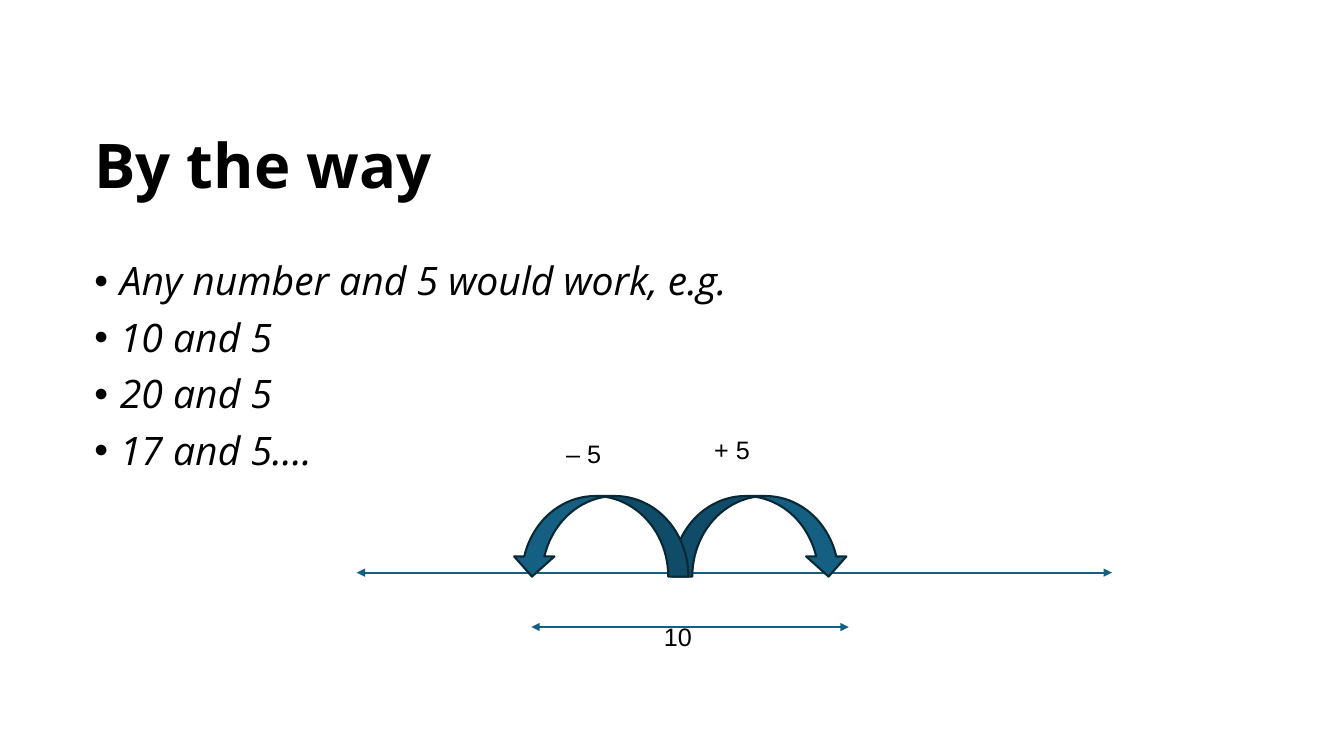
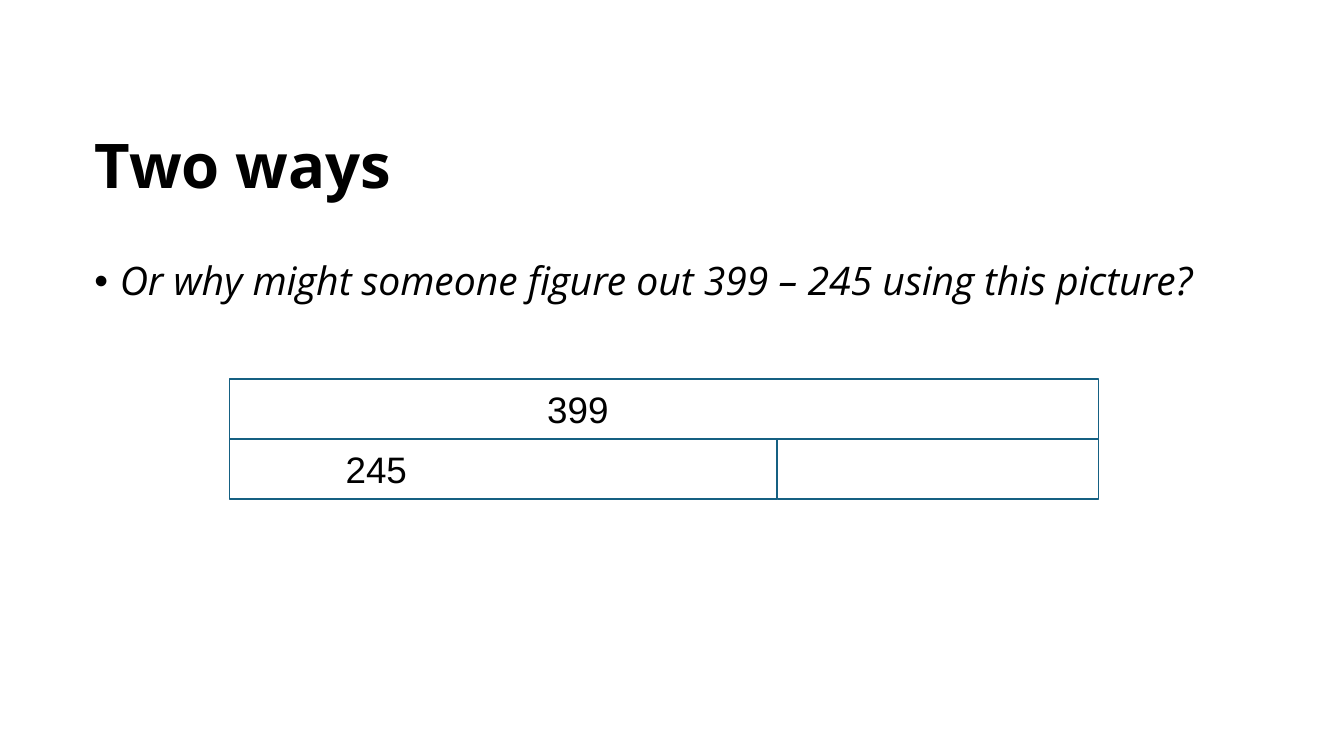
from dataclasses import dataclass

from lxml.etree import SubElement
from pptx import Presentation
from pptx.dml.color import RGBColor as Rgb
from pptx.enum.shapes import MSO_CONNECTOR as Connector, MSO_SHAPE as Preset
from pptx.enum.text import MSO_ANCHOR as Anchor, MSO_AUTO_SIZE as AutoSize, PP_ALIGN as Align
from pptx.oxml.ns import qn
from pptx.util import Cm, Pt


@dataclass(frozen=True)
class Theme:
    ink: Rgb = Rgb(0x00, 0x00, 0x00)
    paper: Rgb = Rgb(0xFF, 0xFF, 0xFF)
    accent: Rgb = Rgb(0x15, 0x60, 0x82)
    accent_dark: Rgb = Rgb(0x08, 0x28, 0x36)
    text_font: str = "Open Sans"
    label_font: str = "Arial"
    title_size: float = 44
    body_size: float = 28
    bar_size: float = 26.3
    label_size: float = 18
    line_width: float = 1.5
    bar_line_width: float = 1.1
    leading: float = 0.9
    bullet_gap: float = 10


THEME = Theme()
MARGIN = 2.13
CONTENT_WIDTH = 29.21


def format_runs(para, font, size, bold=False, italic=False):
    for span in para.runs:
        span.font.name = font
        span.font.size = Pt(size)
        span.font.bold = bold
        span.font.italic = italic
        span.font.color.rgb = THEME.ink


def place(shape, left, top, width, height):
    shape.left, shape.top = Cm(left), Cm(top)
    shape.width, shape.height = Cm(width), Cm(height)


def add_page(deck, title):
    page = deck.slides.add_slide(deck.slide_layouts[5])
    page.background.fill.solid()
    page.background.fill.fore_color.rgb = THEME.paper
    heading = page.shapes.title
    place(heading, MARGIN, 2.41, CONTENT_WIDTH, 3.68)
    frame = heading.text_frame
    frame.text = title
    frame.auto_size = AutoSize.NONE
    frame.vertical_anchor = Anchor.MIDDLE
    para = frame.paragraphs[0]
    para.alignment = Align.LEFT
    para.line_spacing = THEME.leading
    format_runs(para, THEME.text_font, THEME.title_size, bold=True)
    return page


def add_text_box(page, left, top, width, height):
    box = page.shapes.add_textbox(Cm(left), Cm(top), Cm(width), Cm(height))
    box.text_frame.word_wrap = True
    return box.text_frame


def set_bullet(para):
    props = para._p.get_or_add_pPr()
    props.set("marL", str(Cm(0.64)))
    props.set("indent", str(-Cm(0.64)))
    colour = SubElement(props, qn("a:buClr"))
    SubElement(colour, qn("a:srgbClr"), val=str(THEME.ink))
    SubElement(props, qn("a:buFont"), typeface=THEME.label_font)
    SubElement(props, qn("a:buChar"), char="•")


def add_bullets(page, lines):
    frame = add_text_box(page, MARGIN, 6.48, CONTENT_WIDTH, 12.09)
    for index, line in enumerate(lines):
        para = frame.add_paragraph() if index else frame.paragraphs[0]
        para.text = line
        set_bullet(para)
        para.line_spacing = THEME.leading
        if index:
            para.space_before = Pt(THEME.bullet_gap)
        format_runs(para, THEME.text_font, THEME.body_size, italic=True)


def add_label(page, text, left, top):
    frame = add_text_box(page, left, top, 3.33, 1.02)
    frame.text = text
    format_runs(frame.paragraphs[0], THEME.label_font, THEME.label_size)


def add_double_arrow(page, start, end, height):
    arrow = page.shapes.add_connector(
        Connector.STRAIGHT, Cm(start), Cm(height), Cm(end), Cm(height))
    arrow.line.color.rgb = THEME.accent
    arrow.line.width = Pt(THEME.line_width)
    outline = arrow.line._get_or_add_ln()
    for tag in ("a:headEnd", "a:tailEnd"):
        SubElement(outline, qn(tag), type="triangle")
    SubElement(arrow._element.spPr, qn("a:effectLst"))


def add_jump(page, left, backwards=False):
    jump = page.shapes.add_shape(
        Preset.CURVED_DOWN_ARROW, Cm(left), Cm(12.5), Cm(4.45), Cm(2.03))
    jump.shadow.inherit = False
    jump.fill.solid()
    jump.fill.fore_color.rgb = THEME.accent
    jump.line.color.rgb = THEME.accent_dark
    jump.line.width = Pt(THEME.line_width)
    if backwards:
        jump._element.spPr.find(qn("a:xfrm")).set("flipH", "1")


def add_bar(page, left, top, width, height, text="", indent=0):
    bar = page.shapes.add_shape(
        Preset.RECTANGLE, Cm(left), Cm(top), Cm(width), Cm(height))
    bar.shadow.inherit = False
    bar.fill.background()
    bar.line.color.rgb = THEME.accent
    bar.line.width = Pt(THEME.bar_line_width)
    if not text:
        return
    frame = bar.text_frame
    frame.text = text
    frame.margin_left = frame.margin_right = Cm(0.38)
    frame.margin_top = frame.margin_bottom = Cm(0.18)
    frame.vertical_anchor = Anchor.MIDDLE
    para = frame.paragraphs[0]
    para.alignment = Align.LEFT
    para._p.get_or_add_pPr().set("marL", str(Cm(indent)))
    format_runs(para, THEME.label_font, THEME.bar_size)


def add_number_line(page):
    add_double_arrow(page, 8.99, 28.02, 14.43)
    add_jump(page, 16.94)
    add_jump(page, 12.9, backwards=True)
    add_label(page, "+ 5", 17.75, 10.82)
    add_label(page, "– 5", 14.02, 10.92)
    add_label(page, "10", 16.48, 15.52)
    add_double_arrow(page, 13.39, 21.39, 15.8)


def add_bar_model(page):
    left, top, height = 5.79, 9.55, 1.51
    whole, part = 21.89, 13.8
    add_bar(page, left, top, whole, height, "399", 7.62)
    add_bar(page, left, top + height, part, height, "245", 2.54)
    add_bar(page, left + part, top + height, whole - part, height)


def main():
    deck = Presentation()
    deck.slide_width, deck.slide_height = Cm(33.87), Cm(19.05)

    page = add_page(deck, "By the way")
    add_bullets(page, ["Any number and 5 would work, e.g.",
                       "10 and 5", "20 and 5", "17 and 5…."])
    add_number_line(page)

    page = add_page(deck, "Two ways")
    add_bullets(page, ["Or why might someone figure out 399 – 245 using this picture?"])
    add_bar_model(page)

    deck.save("out.pptx")


if __name__ == "__main__":
    main()
